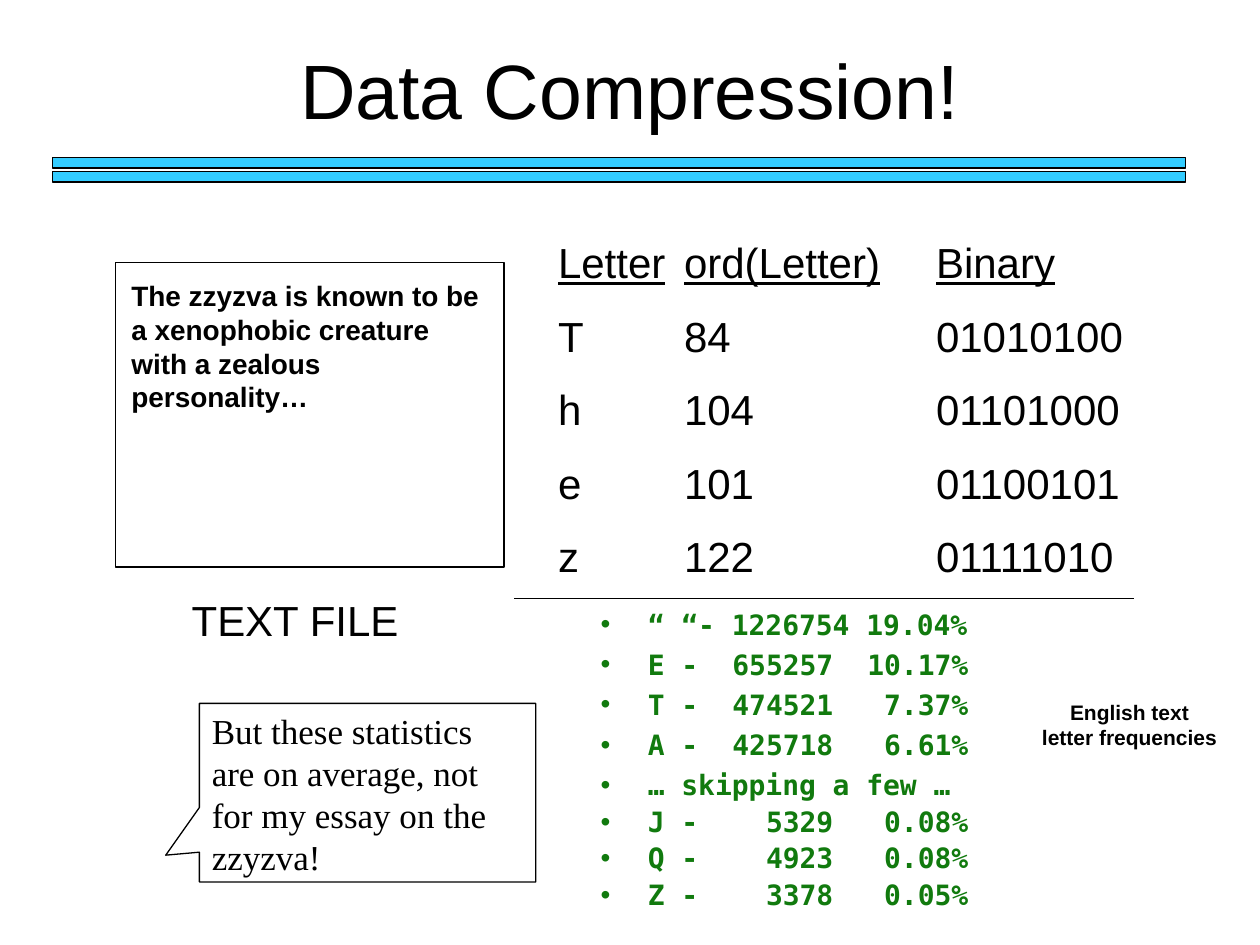
"""Build the data compression slide."""
from lxml.etree import SubElement as Sub
from pptx import Presentation
from pptx.dml.color import RGBColor as Rgb
from pptx.enum.shapes import MSO_CONNECTOR as Link, MSO_SHAPE as Kind
from pptx.enum.text import MSO_ANCHOR as Anchor, PP_ALIGN as Align
from pptx.oxml.ns import qn
from pptx.util import Cm, Pt

INK, SKY, GREEN, WHITE = "000000", "33CCFF", "117A0E", "FFFFFF"
TITLE = "Data Compression!"
ESSAY = ("The zzyzva is known to be a xenophobic creature "
         "with a zealous personality…")
REMARK = ("But these statistics are on average, not for my essay "
          "on the zzyzva!")
NOTE = ["English text", "letter frequencies"]
CODES = [
    ("Letter", "ord(Letter)", "Binary"),
    ("T", "84", "01010100"),
    ("h", "104", "01101000"),
    ("e", "101", "01100101"),
    ("z", "122", "01111010"),
]
COMMON = [
    ("“ “- 1226754 19.04%",),
    ("E -", "655257", "10.17%"),
    ("T -", "474521", "7.37%"),
    ("A -", "425718", "6.61%"),
    ("… skipping a few …",),
]
RARE = [
    ("J -", "5329", "0.08%"),
    ("Q -", "4923", "0.08%"),
    ("Z -", "3378", "0.05%"),
]
BARS = [3.18, 3.46]


def color(code):
    return Rgb.from_string(code)


def write(shape, lines, size, font="Arial", ink=INK, bold=False,
          align=Align.LEFT, gap=0, wrap=True):
    frame = shape.text_frame
    frame.text = "\n".join(lines)
    frame.word_wrap = wrap
    for para in frame.paragraphs:
        para.alignment = align
        para.space_before = Pt(gap)
        for run in para.runs:
            face = run.font
            face.name, face.size, face.bold = font, Pt(size), bold
            face.color.rgb = color(ink)
    return frame


def label(slide, area, lines, size, **style):
    box = slide.shapes.add_textbox(*map(Cm, area))
    return write(box, lines, size, **style)


def block(slide, kind, area, fill=None):
    shape = slide.shapes.add_shape(kind, *map(Cm, area))
    shape.shadow.inherit = False
    if fill:
        shape.fill.solid()
        shape.fill.fore_color.rgb = color(fill)
    else:
        shape.fill.background()
    shape.line.color.rgb = color(INK)
    shape.line.width = Pt(0.75)
    return shape


def tabs(para, stops, side):
    group = Sub(para._p.get_or_add_pPr(), qn("a:tabLst"))
    for stop in stops:
        Sub(group, qn("a:tab"), pos=str(Cm(stop)), algn=side)


def bullet(para, indent):
    props = para._p.get_or_add_pPr()
    props.set("marL", str(Cm(indent)))
    props.set("indent", str(-Cm(indent)))
    Sub(props, qn("a:buFont"), typeface="Arial")
    Sub(props, qn("a:buChar"), char="•")


def rule(slide, left, right, top):
    line = slide.shapes.add_connector(
        Link.STRAIGHT, Cm(left), Cm(top), Cm(right), Cm(top))
    line.line.color.rgb = color(INK)
    line.line.width = Pt(0.75)
    Sub(line._element.spPr, qn("a:effectLst"))


def main():
    deck = Presentation()
    deck.slide_width, deck.slide_height = Cm(25.4), Cm(19.05)
    slide = deck.slides.add_slide(deck.slide_layouts[6])

    title = label(slide, (1.9, 0.2, 21.6, 3.18), [TITLE], 44,
                  align=Align.CENTER)
    title.vertical_anchor = Anchor.MIDDLE
    for top in BARS:
        block(slide, Kind.RECTANGLE, (1.06, top, 22.84, 0.21), SKY)

    label(slide, (2.4, 5.5, 7.56, 2.97), [ESSAY], 16, bold=True)
    block(slide, Kind.RECTANGLE, (2.33, 5.29, 7.83, 6.14))
    label(slide, (3.6, 11.85, 4.7, 1.27), ["TEXT FILE"], 24,
          align=Align.CENTER, wrap=False)

    codes = label(slide, (11, 4.65, 12.5, 7.44),
                  ["\t".join(row) for row in CODES], 24, gap=13.2)
    for para in codes.paragraphs:
        tabs(para, (2.54, 7.62), "l")
    for run in codes.paragraphs[0].runs:
        run.font.underline = True

    counts = label(slide, (11.86, 12.12, 9.53, 6.14),
                   ["\t".join(row) for row in COMMON + RARE], 16,
                   font="DejaVu Sans Mono", ink=GREEN, bold=True, gap=3.75)
    for spot, para in enumerate(counts.paragraphs):
        if spot >= len(COMMON):
            para.line_spacing = 0.9
        bullet(para, 0.95)
        tabs(para, (4.69, 7.41), "r")
    rule(slide, 10.37, 22.86, 12.07)

    bubble = block(slide, Kind.RECTANGULAR_CALLOUT,
                   (4.02, 14.18, 6.78, 3.6), WHITE)
    bubble.adjustments[0], bubble.adjustments[1] = -0.6, 0.35
    speech = write(bubble, [REMARK], 20, font="Times New Roman")
    speech.vertical_anchor = Anchor.TOP
    label(slide, (20.75, 13.97, 4.04, 1.27), NOTE, 12, bold=True,
          align=Align.CENTER, wrap=False)
    deck.save("out.pptx")


if __name__ == "__main__":
    main()
